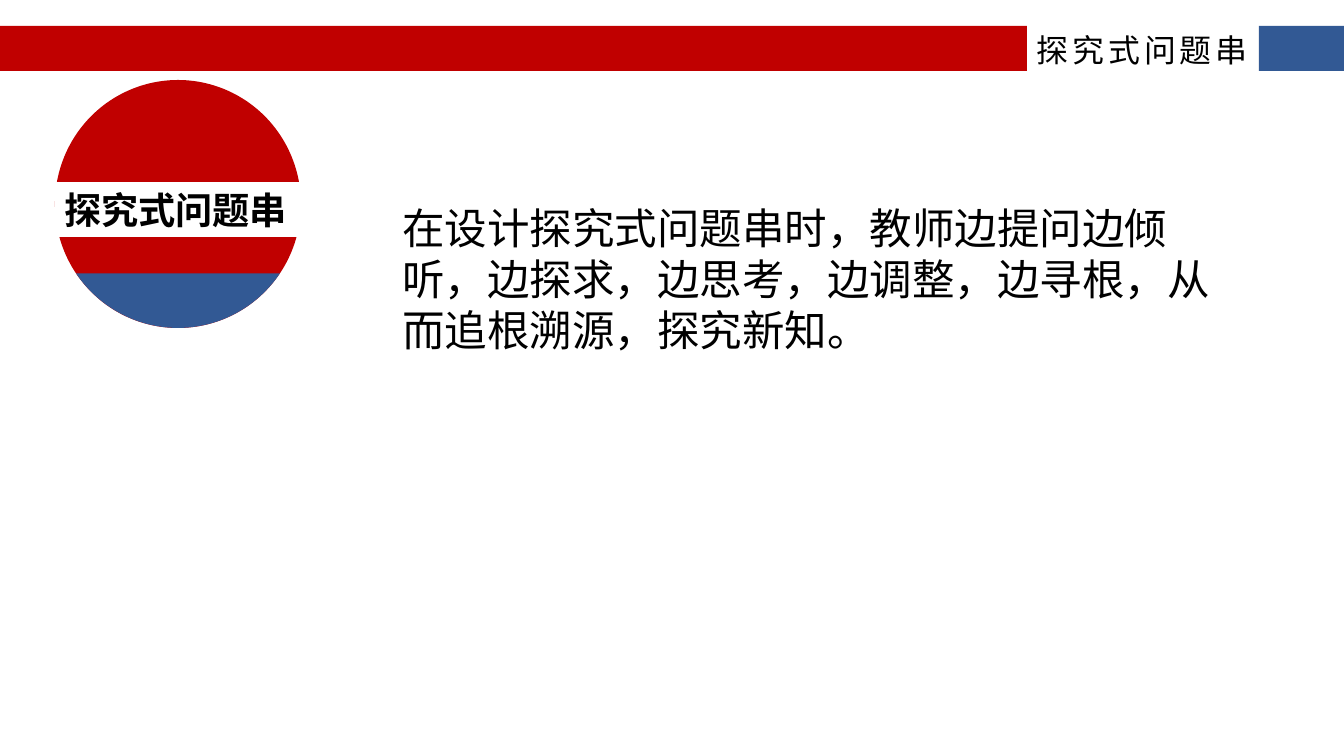
import math

import lxml.etree
import pptx
import pptx.dml.color
import pptx.enum.shapes
import pptx.enum.text
import pptx.oxml.ns
import pptx.util

PX = 914400 / 95.6
SLIDE_WIDTH, SLIDE_HEIGHT = 1344, 756
COLORS = {"red": "C00000", "blue": "325994", "white": "FFFFFF", "black": "000000"}
TOPIC = "探究式问题串"
EXPLANATION = "在设计探究式问题串时，教师边提问边倾听，边探求，边思考，边调整，边寻根，从而追根溯源，探究新知。"
SHAPE = pptx.enum.shapes.MSO_SHAPE
ANCHOR = pptx.enum.text.MSO_ANCHOR


def emu(px):
    return pptx.util.Emu(round(px * PX))


def rgb(color):
    return pptx.dml.color.RGBColor.from_string(COLORS[color])


def paint(shape, color):
    shape.shadow.inherit = False
    shape.fill.solid()
    shape.fill.fore_color.rgb = rgb(color)
    shape.line.fill.background()


def add_block(slide, kind, box, color):
    block = slide.shapes.add_shape(kind, *map(emu, box))
    paint(block, color)
    return block


def write(shape, wording, size, font_name, anchor, bold=False):
    frame = shape.text_frame
    frame.text = wording
    frame.word_wrap = True
    frame.auto_size = pptx.enum.text.MSO_AUTO_SIZE.NONE
    frame.vertical_anchor = anchor
    paragraph = frame.paragraphs[0]
    paragraph.alignment = pptx.enum.text.PP_ALIGN.LEFT
    paragraph._p.get_or_add_pPr().set("hangingPunct", "0")
    font = paragraph.runs[0].font
    font.size = pptx.util.Pt(size)
    font.bold = bold
    font.color.rgb = rgb("black")
    font.name = font_name
    properties = paragraph.runs[0]._r.get_or_add_rPr()
    east_asian = lxml.etree.SubElement(properties, pptx.oxml.ns.qn("a:ea"))
    east_asian.set("typeface", font_name)
    return paragraph


def add_header(slide, box):
    """Red bar, title and blue end block side by side."""
    left, top, width, height = box
    title_width, end_width = 232, 85
    title_left = left + width - end_width - title_width
    add_block(slide, SHAPE.RECTANGLE, (left, top, title_left - left, height), "red")
    add_block(slide, SHAPE.RECTANGLE,
              (left + width - end_width, top, end_width, height), "blue")

    title = slide.shapes.title
    title.left, title.top, title.width, title.height = map(
        emu, (title_left, top - 2, 255, 56))
    paragraph = write(title, TOPIC, 24, "Noto Sans CJK JP", ANCHOR.MIDDLE)
    paragraph.line_spacing = 0.9
    paragraph.runs[0]._r.get_or_add_rPr().set("spc", "300")


def add_badge(slide, box):
    """Red disc with a blue cap at its foot and a white label band across it."""
    left, top, width, height = box
    add_block(slide, SHAPE.OVAL, box, "red")

    cap_start, steps = 34, 48
    sweep = 180 - 2 * cap_start
    angles = [math.radians(cap_start + sweep * step / steps) for step in range(steps + 1)]
    rim = [(emu(left + width / 2 * (1 + math.cos(angle))),
            emu(top + height / 2 * (1 + math.sin(angle)))) for angle in angles]
    outline = slide.shapes.build_freeform(*rim[0])
    outline.add_line_segments(rim[1:], close=True)
    paint(outline.convert_to_shape(), "blue")

    band = add_block(slide, SHAPE.RECTANGLE, (left, top + 102, width + 5, 55), "white")
    write(band, TOPIC, 28, "Noto Sans CJK SC", ANCHOR.MIDDLE, bold=True)


def add_explanation(slide, box):
    panel = add_block(slide, SHAPE.RECTANGLE, box, "white")
    write(panel, EXPLANATION, 32, "Noto Sans CJK SC", ANCHOR.TOP)


def main():
    presentation = pptx.Presentation()
    presentation.slide_width = emu(SLIDE_WIDTH)
    presentation.slide_height = emu(SLIDE_HEIGHT)
    slide = presentation.slides.add_slide(presentation.slide_layouts[5])
    add_header(slide, (0, 26, SLIDE_WIDTH, 45))
    add_badge(slide, (55, 80, 246, 248))
    add_explanation(slide, (393, 197, 850, 164))
    presentation.save("out.pptx")


if __name__ == "__main__":
    main()
